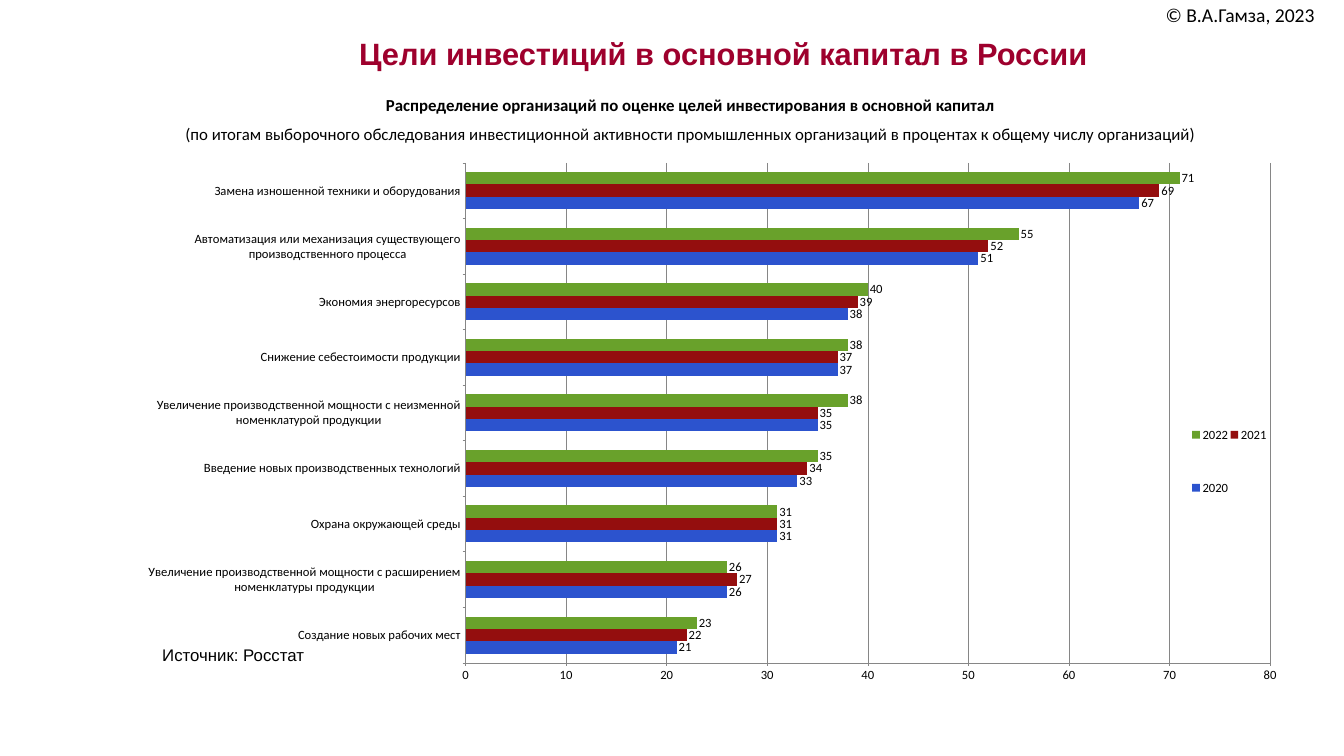
from collections import namedtuple
from dataclasses import dataclass

from lxml import etree
from pptx import Presentation
from pptx.chart.data import CategoryChartData
from pptx.dml.color import RGBColor
from pptx.enum.chart import XL_CHART_TYPE as ChartType
from pptx.enum.chart import XL_LABEL_POSITION as LabelPosition
from pptx.enum.chart import XL_LEGEND_POSITION as LegendPosition
from pptx.enum.chart import XL_TICK_MARK as TickMark
from pptx.enum.text import MSO_ANCHOR as Anchor
from pptx.enum.text import PP_ALIGN as Align
from pptx.oxml.ns import qn
from pptx.util import Pt

Box = namedtuple("Box", "left top width height")


@dataclass(frozen=True)
class Theme:
    heading_font: str = "Arial"
    body_font: str = "Calibri"
    title_color: str = "9E002D"
    text_color: str = "000000"
    line_color: str = "868686"
    title_size: int = 44
    copyright_size: int = 28
    body_size: int = 24
    chart_size: int = 18


THEME = Theme()

YEAR_COLORS = {"2020": "2C53CE", "2021": "940E0E", "2022": "69A12B"}

GOALS = [  # share of organisations in 2020, 2021, 2022
    ("Создание новых рабочих мест", 21, 22, 23),
    ("Увеличение производственной мощности с расширением номенклатуры продукции", 26, 27, 26),
    ("Охрана окружающей среды", 31, 31, 31),
    ("Введение новых производственных технологий", 33, 34, 35),
    ("Увеличение производственной мощности с неизменной номенклатурой продукции", 35, 35, 38),
    ("Снижение себестоимости продукции", 37, 37, 38),
    ("Экономия энергоресурсов", 38, 39, 40),
    ("Автоматизация или механизация существующего производственного процесса", 51, 52, 55),
    ("Замена изношенной техники и оборудования", 67, 69, 71),
]


def color(value):
    return RGBColor.from_string(value)


def place(shape, box):
    shape.left, shape.top, shape.width, shape.height = map(Pt, box)


def set_insets(frame, horizontal, vertical):
    frame.margin_left = frame.margin_right = Pt(horizontal)
    frame.margin_top = frame.margin_bottom = Pt(vertical)


def write(para, text, *, size, font=THEME.body_font, fill=THEME.text_color,
          bold=False, before=0):
    para.alignment = Align.CENTER
    para.space_before = Pt(before)
    span = para.add_run()
    span.text = text
    span.font.name = font
    span.font.size = Pt(size)
    span.font.bold = bold
    span.font.color.rgb = color(fill)


def add_text_frame(page, box, insets=(7.2, 3.6)):
    frame = page.shapes.add_textbox(*map(Pt, box)).text_frame
    frame.word_wrap = True
    set_insets(frame, *insets)
    return frame


def add_title(page, box):
    title = page.shapes.title
    place(title, box)
    frame = title.text_frame
    frame.vertical_anchor = Anchor.BOTTOM
    set_insets(frame, 0, 0)
    write(frame.paragraphs[0], "Цели инвестиций в основной капитал в России",
          size=THEME.title_size, font=THEME.heading_font,
          fill=THEME.title_color, bold=True)


def add_copyright(page, box):
    frame = add_text_frame(page, box)
    write(frame.paragraphs[0], "© В.А.Гамза, 2023", size=THEME.copyright_size)


def add_subtitle(page, box):
    frame = add_text_frame(page, box)
    write(frame.paragraphs[0],
          "Распределение организаций по оценке целей инвестирования в основной капитал",
          size=THEME.body_size, bold=True)
    write(frame.add_paragraph(),
          "(по итогам выборочного обследования инвестиционной активности промышленных "
          "организаций в процентах к общему числу организаций)",
          size=THEME.body_size, before=THEME.body_size / 2)


def add_source(page, box):
    frame = add_text_frame(page, box, insets=(14.4, 7.2))
    write(frame.paragraphs[0], "Источник: Росстат",
          size=THEME.body_size, font=THEME.heading_font)


def set_layout(parent, after, left, top, width, height, inner=False):
    """Fix a chart part at fractions of the chart; after is the preceding element or None."""
    for old in parent.findall(qn("c:layout")):
        parent.remove(old)
    layout = etree.Element(qn("c:layout"))
    manual = etree.SubElement(layout, qn("c:manualLayout"))
    settings = [("layoutTarget", "inner")] if inner else []
    settings += [("xMode", "edge"), ("yMode", "edge"),
                 ("x", left), ("y", top), ("w", width), ("h", height)]
    for name, value in settings:
        etree.SubElement(manual, qn(f"c:{name}")).set("val", str(value))
    if after is None:
        parent.insert(0, layout)
    else:
        after.addnext(layout)


def format_axes(chart):
    for axis in (chart.category_axis, chart.value_axis):
        axis.major_tick_mark = TickMark.OUTSIDE
        axis.minor_tick_mark = TickMark.NONE
        axis.format.line.color.rgb = color(THEME.line_color)
    values = chart.value_axis
    values.minimum_scale, values.maximum_scale, values.major_unit = 0, 80, 10
    values.has_major_gridlines = True
    values.major_gridlines.format.line.color.rgb = color(THEME.line_color)


def format_series(plot):
    plot.gap_width = 150
    plot.overlap = 0
    plot.vary_by_categories = False
    for series in plot.series:
        series.format.fill.solid()
        series.format.fill.fore_color.rgb = color(YEAR_COLORS[series.name])
        series.invert_if_negative = False
        labels = series.data_labels
        labels.show_value = True
        labels.position = LabelPosition.OUTSIDE_END


def add_goals_chart(page, box):
    names, *columns = zip(*GOALS)
    chart_data = CategoryChartData(number_format="General")
    chart_data.categories = names
    for year, values in zip(YEAR_COLORS, columns):
        chart_data.add_series(year, values)
    chart = page.shapes.add_chart(
        ChartType.BAR_CLUSTERED, *map(Pt, box), chart_data).chart
    chart.has_title = False
    chart.font.name = THEME.body_font
    chart.font.size = Pt(THEME.chart_size)
    chart.font.color.rgb = color(THEME.text_color)
    format_axes(chart)
    format_series(chart.plots[0])

    chart.has_legend = True
    chart.legend.position = LegendPosition.RIGHT
    chart.legend.include_in_layout = False
    plot_area = chart.plots[0]._element.getparent()
    set_layout(plot_area, None, 0.28, 0.014, 0.711, 0.94, inner=True)
    legend = plot_area.getparent().find(qn("c:legend"))
    set_layout(legend, legend.find(qn("c:legendPos")), 0.92, 0.44, 0.07, 0.27)


def main():
    deck = Presentation()
    deck.slide_width, deck.slide_height = Pt(1920), Pt(1080)
    page = deck.slides.add_slide(deck.slide_layouts.get_by_name("Title Only"))
    add_title(page, Box(240, 24, 1588, 78))
    add_copyright(page, Box(1629, 0, 285, 42))
    add_source(page, Box(129, 914, 408, 46))
    add_goals_chart(page, Box(212, 222, 1617, 760))
    add_subtitle(page, Box(164, 132, 1644, 80))
    deck.save("out.pptx")


if __name__ == "__main__":
    main()
